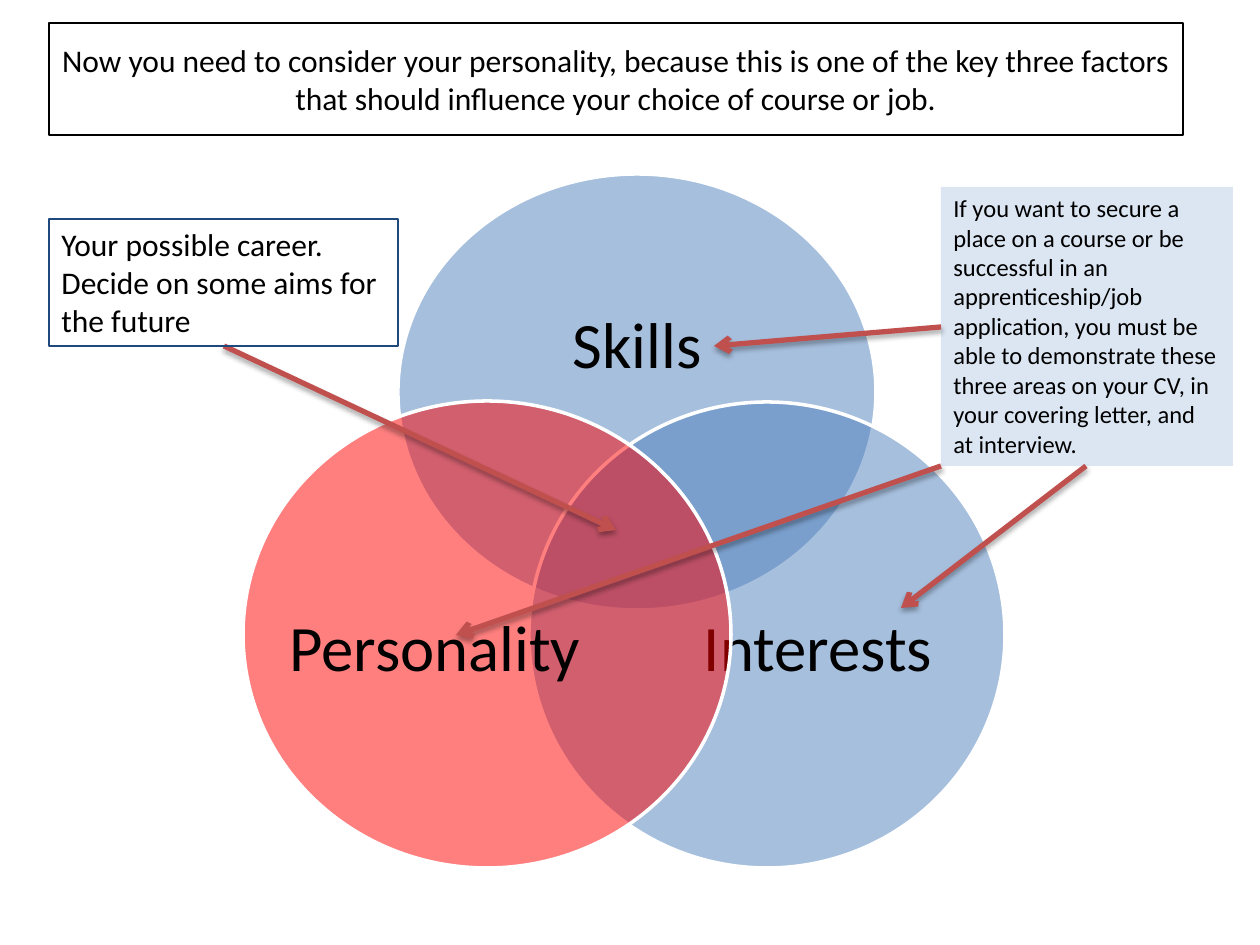
from dataclasses import dataclass
from typing import Optional

from lxml.etree import SubElement
from pptx import Presentation
from pptx.dml.color import RGBColor
from pptx.enum.shapes import MSO_CONNECTOR, MSO_SHAPE
from pptx.enum.text import MSO_ANCHOR as Anchor, MSO_AUTO_SIZE as AutoSize, PP_ALIGN as Align
from pptx.oxml.ns import qn
from pptx.util import Emu, Pt

PX = 914400 / 126

BLACK = RGBColor(0x00, 0x00, 0x00)
WHITE = RGBColor(0xFF, 0xFF, 0xFF)
BLUE = RGBColor(0x4F, 0x81, 0xBD)
RED = RGBColor(0xFF, 0x00, 0x00)
NAVY = RGBColor(0x1F, 0x49, 0x7D)
PALE_BLUE = RGBColor(0xDC, 0xE6, 0xF2)
ARROW_RED = RGBColor(0xC0, 0x50, 0x4D)


@dataclass(frozen=True)
class Box:
    left: int
    top: int
    width: int
    height: int

    def emu(self) -> list[Emu]:
        return [px(v) for v in (self.left, self.top, self.width, self.height)]


@dataclass(frozen=True)
class Circle:
    name: str
    box: Box
    label_box: Box
    color: RGBColor


@dataclass(frozen=True)
class Arrow:
    start: tuple[int, int]
    end: tuple[int, int]


CIRCLES = [
    Circle("Skills", Box(398, 174, 478, 436), Box(462, 249, 350, 197), BLUE),
    Circle("Interests", Box(529, 402, 476, 466), Box(675, 522, 286, 257), BLUE),
    Circle("Personality", Box(243, 401, 488, 467), Box(289, 522, 292, 257), RED),
]
CAREER_ARROW = Arrow((224, 346), (616, 530))
EVIDENCE_ARROWS = [
    Arrow((941, 327), (714, 346)),
    Arrow((941, 466), (456, 635)),
    Arrow((1086, 466), (901, 608)),
]


def px(value: int) -> Emu:
    return Emu(round(value * PX))


def add_text(slide, box: Box, text: str, *, size: int, align=Align.LEFT,
             anchor=Anchor.TOP, margin: Optional[int] = None, spacing: Optional[float] = None,
             auto_size=AutoSize.NONE, fill: Optional[RGBColor] = None,
             line: Optional[RGBColor] = None) -> None:
    shape = slide.shapes.add_textbox(*box.emu())
    if fill is not None:
        shape.fill.solid()
        shape.fill.fore_color.rgb = fill
    if line is not None:
        shape.line.color.rgb = line
        shape.line.width = Pt(0.75)
    frame = shape.text_frame
    frame.word_wrap = True
    frame.auto_size = auto_size
    frame.vertical_anchor = anchor
    if margin is not None:
        frame.margin_left = frame.margin_right = px(margin)
        frame.margin_top = frame.margin_bottom = px(margin)
    frame.text = text
    for paragraph in frame.paragraphs:
        paragraph.alignment = align
        paragraph.line_spacing = spacing
        for run in paragraph.runs:
            run.font.name = "Calibri"
            run.font.size = Pt(size)
            run.font.color.rgb = BLACK


def add_circle(slide, circle: Circle) -> None:
    """Draw a half-transparent ellipse and its label."""
    shape = slide.shapes.add_shape(MSO_SHAPE.OVAL, *circle.box.emu())
    shape.shadow.inherit = False
    shape.fill.solid()
    shape.fill.fore_color.rgb = circle.color
    color = shape._element.spPr.find(qn("a:solidFill"))[0]
    SubElement(color, qn("a:alpha"), val="50000")
    shape.line.color.rgb = WHITE
    shape.line.width = Pt(2)
    add_text(slide, circle.label_box, circle.name, size=37, align=Align.CENTER,
             anchor=Anchor.MIDDLE, margin=0, spacing=0.9)


def add_arrow(slide, arrow: Arrow) -> None:
    """Draw an open-headed arrow with a soft shadow below it."""
    ends = [px(v) for v in arrow.start + arrow.end]
    connector = slide.shapes.add_connector(MSO_CONNECTOR.STRAIGHT, *ends)
    connector.line.color.rgb = ARROW_RED
    connector.line.width = Pt(3)
    properties = connector._element.spPr
    SubElement(properties.find(qn("a:ln")), qn("a:tailEnd"), type="arrow")
    effects = SubElement(properties, qn("a:effectLst"))
    shadow = SubElement(effects, qn("a:outerShdw"), blurRad=str(Pt(3.1)),
                        dist=str(Pt(1.8)), dir="5400000", rotWithShape="0")
    color = SubElement(shadow, qn("a:srgbClr"), val=str(BLACK))
    SubElement(color, qn("a:alpha"), val="35000")


def main() -> None:
    presentation = Presentation()
    presentation.slide_width, presentation.slide_height = px(1260), px(945)
    slide = presentation.slides.add_slide(presentation.slide_layouts[6])

    add_text(slide, Box(49, 23, 1134, 112),
             "Now you need to consider your personality, because this is one of the key "
             "three factors that should influence your choice of course or job.",
             size=18, align=Align.CENTER, anchor=Anchor.MIDDLE, line=BLACK)
    for circle in CIRCLES:
        add_circle(slide, circle)
    add_arrow(slide, CAREER_ARROW)
    add_text(slide, Box(49, 219, 349, 127),
             "Your possible career.\nDecide on some aims for the future",
             size=18, auto_size=AutoSize.SHAPE_TO_FIT_TEXT, line=NAVY)
    add_text(slide, Box(941, 187, 292, 279),
             "If you want to secure a place on a course or be successful in an "
             "apprenticeship/job application, you must be able to demonstrate these "
             "three areas on your CV, in your covering letter, and at interview.",
             size=14, auto_size=AutoSize.SHAPE_TO_FIT_TEXT, fill=PALE_BLUE)
    for arrow in EVIDENCE_ARROWS:
        add_arrow(slide, arrow)

    presentation.save("out.pptx")


if __name__ == "__main__":
    main()
